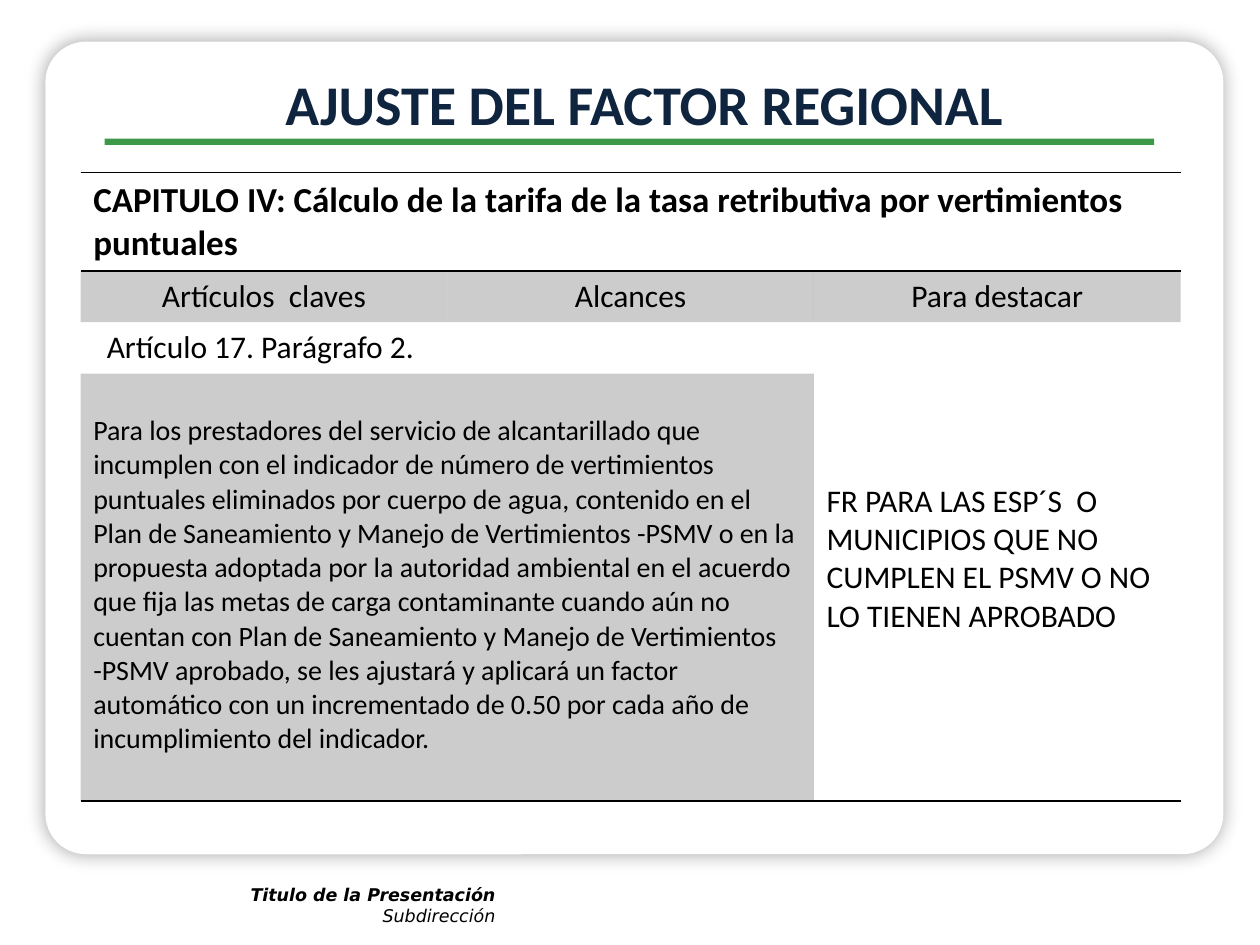
from lxml import etree
from pptx import Presentation
from pptx.dml.color import RGBColor
from pptx.enum.shapes import MSO_SHAPE as SHAPE
from pptx.enum.text import MSO_ANCHOR as ANCHOR, PP_ALIGN as ALIGN
from pptx.oxml import parse_xml
from pptx.oxml.ns import nsdecls, qn
from pptx.util import Inches, Pt

COLORS = {"white": "FFFFFF", "black": "000000", "green": "3D9948", "navy": "0F243E"}
NO_STYLE = "{2D5ABB26-0587-4C30-8999-92F81FD0307C}"
COLUMN_WIDTH = 2.91
ROW_HEIGHTS = [0.78, 0.4, 0.41, 3.39]
HEADINGS = ["Artículos  claves", "Alcances", "Para destacar"]
CHAPTER = "CAPITULO IV: Cálculo de la tarifa de la tasa retributiva por vertimientos puntuales"
HIGHLIGHT = "FR PARA LAS ESP´S  O MUNICIPIOS QUE NO CUMPLEN EL PSMV O NO LO TIENEN APROBADO"
SCOPE = (
    "Para los prestadores del servicio de alcantarillado que incumplen con el indicador "
    "de número de vertimientos puntuales eliminados por cuerpo de agua, contenido en el "
    "Plan de Saneamiento y Manejo de Vertimientos -PSMV o en la propuesta adoptada por la "
    "autoridad ambiental en el acuerdo que fija las metas de carga contaminante cuando aún "
    "no cuentan con Plan de Saneamiento y Manejo de Vertimientos -PSMV aprobado, se les "
    "ajustará y aplicará un factor automático con un incrementado de 0.50 por cada año de "
    "incumplimiento del indicador."
)


def rgb(name):
    return RGBColor.from_string(COLORS[name])


def write(paragraph, text, size=18, font="Calibri", color="black",
          bold=False, italic=False, align=ALIGN.LEFT):
    paragraph.alignment = align
    run = paragraph.add_run()
    run.text = text
    run.font.size = Pt(size)
    run.font.name = font
    run.font.color.rgb = rgb(color)
    run.font.bold = bold
    run.font.italic = italic


def add_block(slide, preset, left, top, width, height, color):
    shape = slide.shapes.add_shape(
        preset, Inches(left), Inches(top), Inches(width), Inches(height))
    shape.shadow.inherit = False
    shape.fill.solid()
    shape.fill.fore_color.rgb = rgb(color)
    shape.line.fill.background()
    return shape


def add_glow_shadow(shape):
    effects = shape._element.spPr.find(qn("a:effectLst"))
    effects.append(parse_xml(
        f'<a:outerShdw {nsdecls("a")} blurRad="{Pt(10.8)}" dist="0" dir="5400000" '
        f'algn="ctr" rotWithShape="0"><a:srgbClr val="{COLORS["black"]}">'
        '<a:alpha val="35000"/></a:srgbClr></a:outerShdw>'))


def add_panel(slide):
    panel = add_block(slide, SHAPE.ROUNDED_RECTANGLE, 0.36, 0.33, 9.35, 6.45, "white")
    panel.adjustments[0] = 0.05
    add_glow_shadow(panel)
    add_block(slide, SHAPE.RECTANGLE, 0.83, 1.1, 8.33, 0.05, "green")


def add_footer(slide):
    box = slide.shapes.add_textbox(Inches(0.8), Inches(6.97), Inches(3.23), Inches(0.44))
    frame = box.text_frame
    frame.word_wrap = True
    style = {"size": 10, "font": "DejaVu Sans", "italic": True, "align": ALIGN.RIGHT}
    write(frame.paragraphs[0], "Titulo de la Presentación", bold=True, **style)
    write(frame.add_paragraph(), "Subdirección", **style)


def set_title(slide, text):
    title = slide.shapes.title
    title.left, title.top = Inches(2.18), Inches(0.47)
    title.width, title.height = Inches(6.18), Inches(0.39)
    frame = title.text_frame
    frame.vertical_anchor = ANCHOR.TOP
    frame.margin_left, frame.margin_right = 0, Inches(0.31)
    frame.margin_top = Inches(0.08)
    write(frame.paragraphs[0], text, size=32, color="navy", bold=True, align=ALIGN.CENTER)


def shade(cell):
    cell.fill.solid()
    cell.fill.fore_color.rgb = rgb("black")
    color = cell._tc.tcPr.find(".//" + qn("a:srgbClr"))
    etree.SubElement(color, qn("a:alpha")).set("val", "20000")


def add_borders(cell, *sides):
    properties = cell._tc.get_or_add_tcPr()
    for position, side in enumerate(sides):
        properties.insert(position, parse_xml(
            f'<a:{side} {nsdecls("a")} w="{Pt(1)}"><a:solidFill>'
            f'<a:srgbClr val="{COLORS["black"]}"/></a:solidFill></a:{side}>'))


def fill_cell(cell, text, top_margin=0.05, **style):
    cell.margin_top = Inches(top_margin)
    write(cell.text_frame.paragraphs[0], text, **style)


def add_articles_table(slide):
    frame = slide.shapes.add_table(
        len(ROW_HEIGHTS), len(HEADINGS), Inches(0.64), Inches(1.37),
        Inches(COLUMN_WIDTH * len(HEADINGS)), Inches(sum(ROW_HEIGHTS)))
    table = frame.table
    table._tbl.tblPr.find(qn("a:tableStyleId")).text = NO_STYLE
    table.first_row = table.horz_banding = False
    for column in table.columns:
        column.width = Inches(COLUMN_WIDTH)
    for row, height in zip(table.rows, ROW_HEIGHTS):
        row.height = Inches(height)
    for cell in table.iter_cells():
        cell.fill.background()

    # Spans
    table.cell(0, 0).merge(table.cell(0, 2))
    table.cell(2, 2).merge(table.cell(3, 2))
    table.cell(3, 0).merge(table.cell(3, 1))

    # Contents
    fill_cell(table.cell(0, 0), CHAPTER, size=20, bold=True)
    for index, heading in enumerate(HEADINGS):
        fill_cell(table.cell(1, index), heading, align=ALIGN.CENTER)
        shade(table.cell(1, index))
    fill_cell(table.cell(2, 0), "Artículo 17. Parágrafo 2. ", align=ALIGN.CENTER)
    fill_cell(table.cell(2, 2), HIGHLIGHT, top_margin=1.27)
    fill_cell(table.cell(3, 0), SCOPE, top_margin=0.32, size=16)
    shade(table.cell(3, 0))

    # Rules above and below the chapter and under the last row
    for index in range(len(HEADINGS)):
        add_borders(table.cell(0, index), "lnT", "lnB")
        add_borders(table.cell(3, index), "lnB")
    add_borders(table.cell(2, 2), "lnB")


def main():
    presentation = Presentation()
    presentation.slide_width, presentation.slide_height = Inches(10), Inches(7.5)
    slide = presentation.slides.add_slide(presentation.slide_layouts[5])
    add_panel(slide)
    add_footer(slide)
    set_title(slide, "AJUSTE DEL FACTOR REGIONAL")
    # The title comes after the panel so that it stays in front
    slide.shapes._spTree.append(slide.shapes.title._element)
    add_articles_table(slide)
    presentation.save("out.pptx")


if __name__ == "__main__":
    main()
